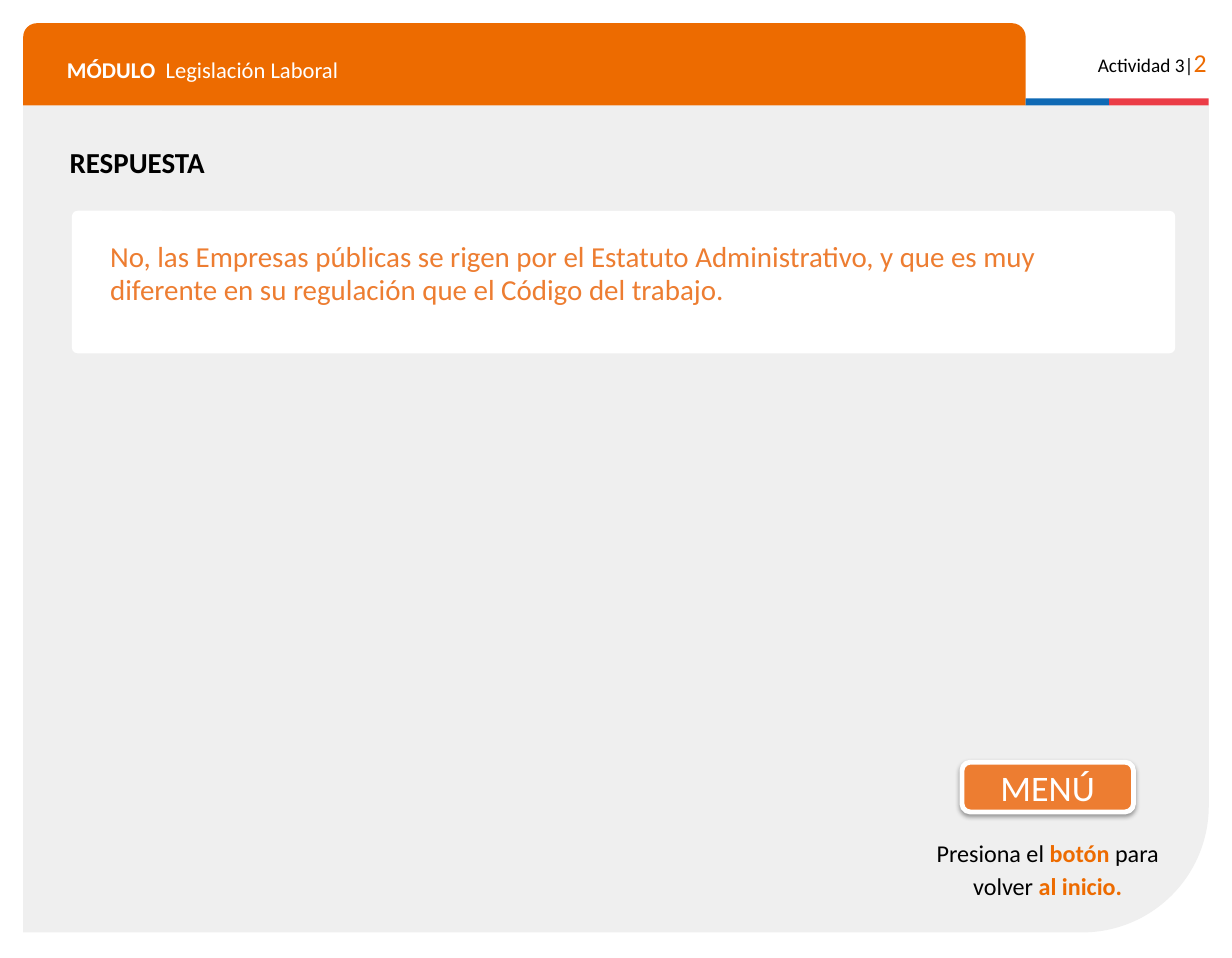
import pptx
import pptx.util
import pptx.dml.color
import pptx.enum.shapes
import pptx.enum.text
import pptx.oxml
import pptx.oxml.ns

Inches = pptx.util.Inches
Pt = pptx.util.Pt
RGBColor = pptx.dml.color.RGBColor
SHAPE = pptx.enum.shapes.MSO_SHAPE
ALIGN = pptx.enum.text.PP_ALIGN
ANCHOR = pptx.enum.text.MSO_ANCHOR

ORANGE = RGBColor(0xED, 0x6B, 0x00)
SOFT_ORANGE = RGBColor(0xED, 0x7D, 0x31)
BLUE = RGBColor(0x0F, 0x69, 0xB4)
RED = RGBColor(0xEB, 0x3C, 0x46)
GREY = RGBColor(0xEF, 0xEF, 0xEF)
WHITE = RGBColor(0xFF, 0xFF, 0xFF)
BLACK = RGBColor(0x00, 0x00, 0x00)

FONT = "Calibri"
SHADOW = (
    f'<a:effectLst {pptx.oxml.ns.nsdecls("a")}>'
    '<a:outerShdw blurRad="39370" dist="20320" dir="5400000" rotWithShape="0">'
    '<a:srgbClr val="000000"><a:alpha val="38000"/></a:srgbClr>'
    '</a:outerShdw></a:effectLst>'
)


def write(shape, runs, align=ALIGN.LEFT, anchor=ANCHOR.TOP, insets=(0.1, 0.1),
          line_spacing=None, space_before=0):
    """Fill a shape with one paragraph of (text, size, colour, bold) runs."""
    frame = shape.text_frame
    frame.word_wrap = True
    frame.auto_size = pptx.enum.text.MSO_AUTO_SIZE.NONE
    frame.vertical_anchor = anchor
    frame.margin_left = frame.margin_right = Inches(insets[0])
    frame.margin_top = frame.margin_bottom = Inches(insets[1])
    paragraph = frame.paragraphs[0]
    paragraph.alignment = align
    paragraph.line_spacing = line_spacing
    paragraph.space_before = Pt(space_before)
    for text, size, colour, bold in runs:
        run = paragraph.add_run()
        run.text = text
        run.font.name = FONT
        run.font.size = Pt(size)
        run.font.color.rgb = colour
        run.font.bold = bold
    return paragraph


def add_panel(slide, kind, box, colour, corners=()):
    panel = slide.shapes.add_shape(kind, *map(Inches, box))
    panel.shadow.inherit = False
    panel.fill.solid()
    panel.fill.fore_color.rgb = colour
    panel.line.fill.background()
    for index, corner in enumerate(corners):
        panel.adjustments[index] = corner
    return panel


def add_label(slide, box, runs, **style):
    label = slide.shapes.add_textbox(*map(Inches, box))
    write(label, runs, **style)


def fill_placeholder(slide, placeholder, box, runs, **style):
    """Move a placeholder, bring it to the front and write in it."""
    placeholder.left, placeholder.top, placeholder.width, placeholder.height = map(Inches, box)
    slide.shapes._spTree.append(placeholder._element)
    return write(placeholder, runs, **style)


def add_menu_button(slide):
    button = add_panel(slide, SHAPE.ROUNDED_RECTANGLE, (8.3, 6.58, 1.48, 0.43),
                       SOFT_ORANGE, (0.167,))
    button.line.color.rgb = WHITE
    button.line.width = Pt(3)
    properties = button._element.spPr
    properties.remove(properties.find(pptx.oxml.ns.qn("a:effectLst")))
    properties.append(pptx.oxml.parse_xml(SHADOW))
    write(button, [("MENÚ", 22.3, WHITE, False)], align=ALIGN.CENTER,
          anchor=ANCHOR.MIDDLE, insets=(0.08, 0.04))


def main():
    deck = pptx.Presentation()
    deck.slide_width, deck.slide_height = Inches(10.63), Inches(8.27)
    slide = deck.slides.add_slide(deck.slide_layouts[1])

    # Background, rounded at the lower right
    background = add_panel(slide, SHAPE.ROUND_1_RECTANGLE, (0.2, 0.91, 10.23, 7.14),
                           GREY, (0.153,))
    background._element.spPr.xfrm.set("flipV", "1")

    # Header
    add_panel(slide, SHAPE.ROUND_2_SAME_RECTANGLE, (0.2, 0.2, 8.65, 0.71), ORANGE, (0.167, 0))
    add_panel(slide, SHAPE.RECTANGLE, (8.85, 0.85, 0.72, 0.06), BLUE)
    add_panel(slide, SHAPE.RECTANGLE, (9.57, 0.85, 0.86, 0.06), RED)
    add_label(slide, (9.23, 0.3, 1.28, 0.38),
              [("Actividad 3|", 12, BLACK, False), ("2", 16, ORANGE, False)],
              align=ALIGN.RIGHT)
    add_label(slide, (0.48, 0.38, 8.14, 0.35),
              [("MÓDULO ", 14, WHITE, True), (" Legislación Laboral", 14, WHITE, False)])

    # Answer
    fill_placeholder(slide, slide.shapes.title, (0.5, 1.15, 2.31, 0.67),
                     [("RESPUESTA", 18, BLACK, True)])
    add_panel(slide, SHAPE.ROUNDED_RECTANGLE, (0.62, 1.82, 9.52, 1.23), WHITE, (0.04,))
    answer = fill_placeholder(
        slide, slide.placeholders[1], (0.85, 2.02, 8.45, 1.03),
        [("No, las Empresas públicas se rigen por el Estatuto Administrativo, y que es muy "
          "diferente en su regulación que el Código del trabajo.", 18, SOFT_ORANGE, False)],
        insets=(0.1, 0.05), line_spacing=Pt(20.8), space_before=3)
    answer_format = answer._p.get_or_add_pPr()
    answer_format.set("marL", "0")
    answer_format.set("indent", "0")
    answer_format.append(pptx.oxml.parse_xml(f'<a:buNone {pptx.oxml.ns.nsdecls("a")}/>'))

    # Return to the menu
    add_menu_button(slide)
    add_label(slide, (7.87, 7.18, 2.34, 0.61),
              [("Presiona el ", 15, BLACK, False), ("botón", 15, ORANGE, True),
               (" para volver ", 15, BLACK, False), ("al inicio.", 15, ORANGE, True)],
              align=ALIGN.CENTER, anchor=ANCHOR.MIDDLE, line_spacing=1.15)

    deck.save("out.pptx")


if __name__ == "__main__":
    main()
